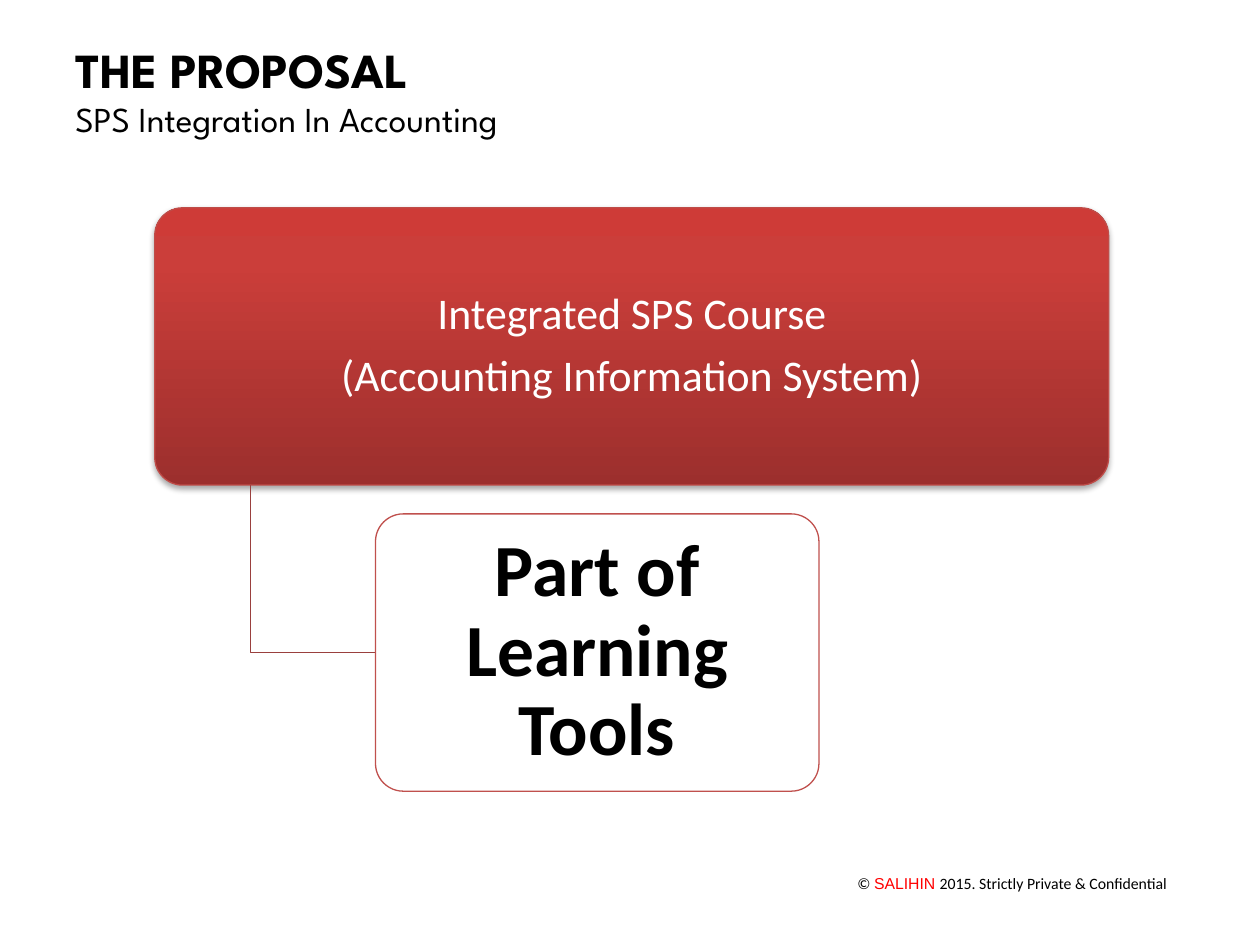
from copy import deepcopy
from lxml.etree import SubElement as Sub
from pptx import Presentation as Deck
from pptx.dml.color import RGBColor as Rgb
from pptx.enum.shapes import MSO_SHAPE as Kind
from pptx.enum.text import MSO_ANCHOR as Anchor, MSO_AUTO_SIZE as Fit, PP_ALIGN as Align
from pptx.oxml.ns import qn
from pptx.util import Cm, Pt


def tint(color, code):
    color.rgb = Rgb.from_string(code)


def style(font, size, name, code, bold=False):
    font.size, font.name, font.bold = Pt(size), name, bold
    tint(font.color, code)


def put(shape, box):
    shape.left, shape.top, shape.width, shape.height = map(Cm, box)


def head(slide, box, title, sub):
    x, y, w, h = box
    top = slide.shapes.title
    put(top, (x, y, w, 1.45))
    low = slide.shapes.add_textbox(Cm(x), Cm(y + 1.19), Cm(w), Cm(h - 1.19))
    for shape, text, size, bold in ((top, title, 28, True), (low, sub, 20, False)):
        frame = shape.text_frame
        frame.text = text
        frame.word_wrap = True
        frame.auto_size = Fit.NONE
        frame.vertical_anchor = Anchor.TOP
        para = frame.paragraphs[0]
        para.alignment = Align.LEFT
        style(para.font, size, "League Spartan", "000000", bold)


def card(slide, box, lines, size, code, edge, inset, bold=False):
    shape = slide.shapes.add_shape(Kind.ROUNDED_RECTANGLE, *map(Cm, box))
    shape.adjustments[0] = 0.1
    shape.shadow.inherit = False
    tint(shape.line.color, edge)
    shape.line.width = Pt(0.75)
    frame = shape.text_frame
    frame.word_wrap = True
    frame.vertical_anchor = Anchor.MIDDLE
    frame.margin_left = frame.margin_right = Cm(inset)
    frame.margin_top = frame.margin_bottom = Cm(inset * 0.65)
    frame.text = "\n".join(lines)
    for para in frame.paragraphs:
        para.alignment = Align.CENTER
        para.line_spacing = 0.9
        para.space_after = Pt(size * 0.35)
        style(para.font, size, "Calibri", code, bold)
    return shape


def shade(shape, stops):
    fill = shape.fill
    fill.gradient()
    fill.gradient_angle = 90
    rows = shape._element.spPr.find(".//" + qn("a:gsLst"))
    rows.append(deepcopy(rows[-1]))
    for stop, (place, code) in zip(fill.gradient_stops, stops):
        stop.position = place
        tint(stop.color, code)


def drop(shape):
    group = shape._element.spPr.find(qn("a:effectLst"))
    cast = Sub(group, qn("a:outerShdw"), blurRad=str(Pt(3.1)), dist=str(Pt(1.8)),
               dir="5400000", rotWithShape="0")
    color = Sub(cast, qn("a:srgbClr"), val="000000")
    Sub(color, qn("a:alpha"), val="35000")


def elbow(slide, start, end):
    (x, y), (right, low) = start, end
    pen = slide.shapes.build_freeform(Cm(x), Cm(y))
    pen.add_line_segments([(Cm(x), Cm(low)), (Cm(right), Cm(low))], close=False)
    shape = pen.convert_to_shape()
    shape.shadow.inherit = False
    shape.fill.background()
    tint(shape.line.color, "9A403E")
    shape.line.width = Pt(0.75)


def tree(slide, box):
    x, y, w, h = box
    tall, gap = 5.59, 0.58
    left, low = x + 4.45, y + tall + gap
    root = card(slide, (x, y, w, tall),
                ("Integrated SPS Course", "(Accounting Information System)"),
                25, "FFFFFF", "BF4C48", 0.13)
    shade(root, ((0, "9C2F2D"), (0.8, "CB3E3A"), (1, "CE3B37")))
    drop(root)
    elbow(slide, (x + w / 10, y + tall), (left, low + tall / 2))
    leaf = card(slide, (left, low, 8.94, h - tall - gap), ("Part of Learning Tools",),
                42, "000000", "C0504D", 0.23, True)
    leaf.fill.solid()
    tint(leaf.fill.fore_color, "FFFFFF")
    paint = leaf._element.spPr.find(qn("a:solidFill"))[0]
    Sub(paint, qn("a:alpha"), val="90000")


def foot(slide, box):
    frame = slide.shapes.add_textbox(*map(Cm, box)).text_frame
    frame.word_wrap = True
    para = frame.paragraphs[0]
    para.alignment = Align.RIGHT
    for text, name, code in (("© ", "Calibri", "000000"),
                             ("SALIHIN ", "Arial", "FF0000"),
                             ("2015. Strictly Private & Confidential", "Calibri", "000000")):
        run = para.add_run()
        run.text = text
        style(run.font, 9, name, code)


def main():
    deck = Deck()
    deck.slide_width, deck.slide_height = Cm(25.4), Cm(19.05)
    slide = deck.slides.add_slide(deck.slide_layouts[5])
    foot(slide, (16.94, 17.48, 6.83, 0.64))
    tree(slide, (3.12, 4.19, 19.23, 11.76))
    head(slide, (1.27, 0.66, 17.15, 2.31), "THE PROPOSAL", "SPS Integration In Accounting")
    deck.save("out.pptx")


if __name__ == "__main__":
    main()
